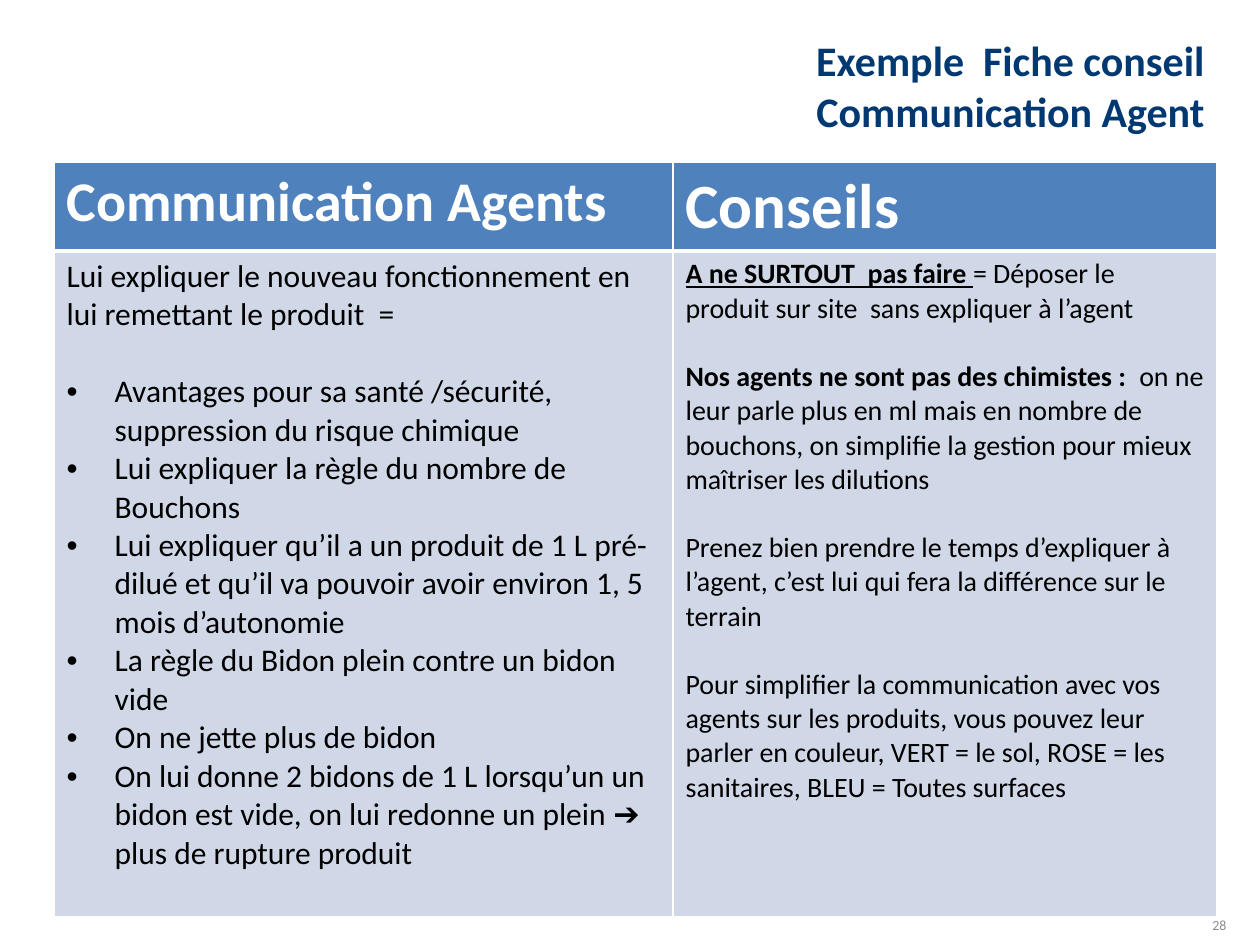
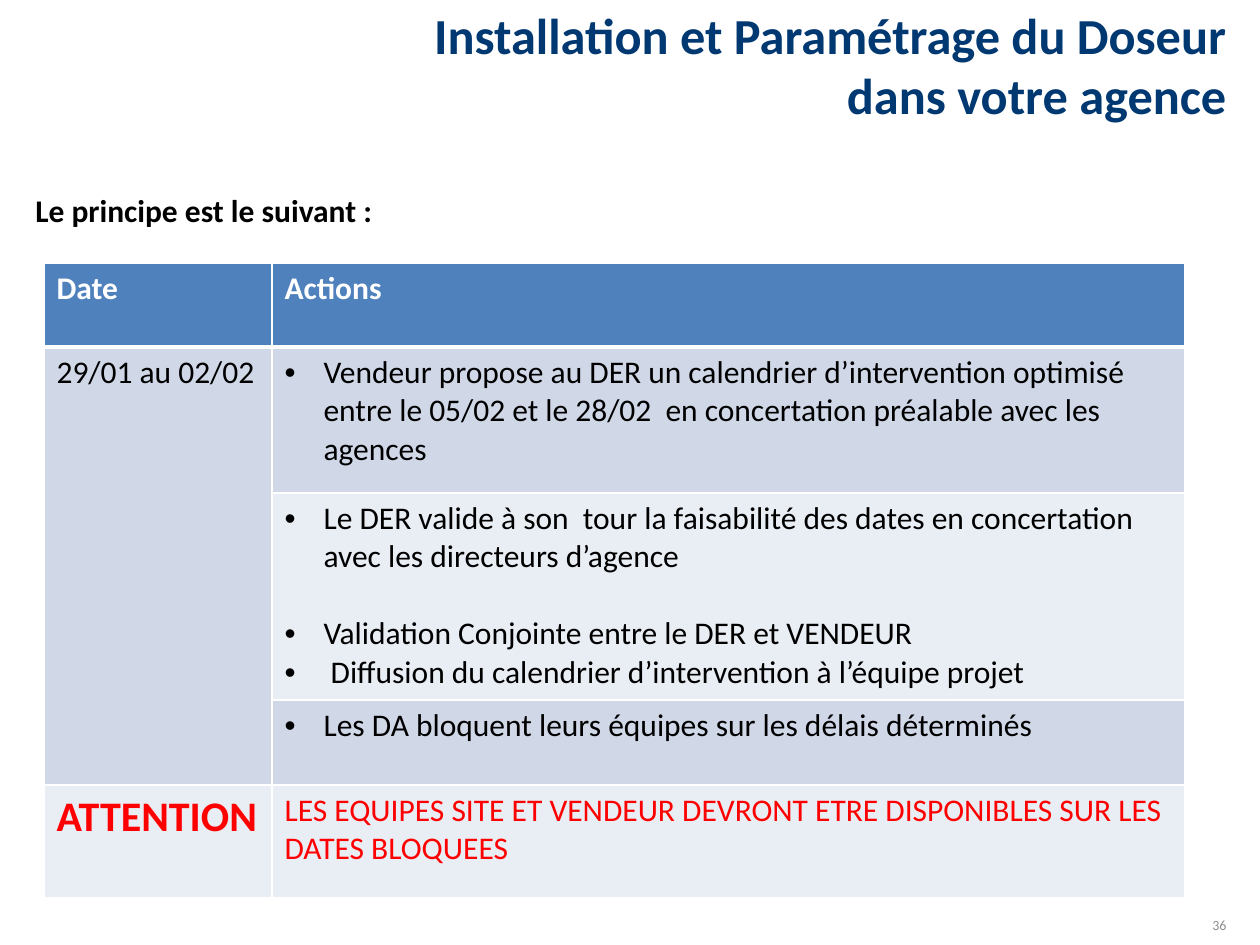
from dataclasses import dataclass, field

from lxml import etree
from pptx import Presentation
from pptx import util as u
from pptx.dml.color import RGBColor
from pptx.enum import text
from pptx.oxml import ns

FONT = "Calibri"
PX_PER_INCH = 126
COLORS = {
    "title": "003871",
    "header": "4F81BD",
    "band": "D0D8E8",
    "light": "E9EDF4",
    "white": "FFFFFF",
    "black": "000000",
    "alert": "FF0000",
    "number": "8C8C8C",
}

# Text formats
TITLE = {"size": 24, "bold": True, "color": "title"}
BIG_TITLE = TITLE | {"size": 28.8}
NUMBER = {"size": 8, "bold": False, "color": "number"}
BODY = {"size": 18, "bold": False, "color": "black"}
STRONG = BODY | {"bold": True}
ADVICE = BODY | {"size": 16}
ADVICE_STRONG = ADVICE | {"bold": True}
ADVICE_KEY = ADVICE_STRONG | {"underline": True}
HEADER = {"size": 18, "bold": True, "color": "white"}
ALERT = BODY | {"color": "alert"}
BIG_ALERT = ALERT | {"size": 24, "bold": True}

# Gaps of one text line, in points
BODY_GAP = 22
ADVICE_GAP = 19.5


@dataclass
class Span:
    words: str
    style: dict


@dataclass
class Para:
    spans: list[Span]
    hang: int = 0  # bullet indent in px, 0 for no bullet
    before: float = 0
    align: text.PP_ALIGN = text.PP_ALIGN.LEFT


@dataclass
class Cell:
    paras: list[Para]
    fill: str
    rows: int = 1  # rows covered by the cell


@dataclass
class Grid:
    left: int
    top: int
    columns: list[int]
    rows: list[int]
    cells: dict[tuple[int, int], Cell] = field(default_factory=dict)


def px(length: int) -> u.Emu:
    return u.Emu(round(length * 914400 / PX_PER_INCH))


def line(words: str, style: dict, **layout) -> Para:
    return Para([Span(words, style)], **layout)


def add_bullet(para, hang: int) -> None:
    props = para._p.get_or_add_pPr()
    props.set("marL", str(px(hang)))
    props.set("indent", str(-px(hang)))
    etree.SubElement(props, ns.qn("a:buFont")).set("typeface", "Arial")
    etree.SubElement(props, ns.qn("a:buChar")).set("char", "•")


def write_span(para, span: Span) -> None:
    for index, words in enumerate(span.words.split("\n")):
        if index:
            para.add_line_break()
        run = para.add_run()
        run.text = words
        values = {"name": FONT} | span.style
        values["size"] = u.Pt(values["size"])
        run.font.color.rgb = RGBColor.from_string(COLORS[values.pop("color")])
        for name, value in values.items():
            setattr(run.font, name, value)


def write(frame, paras: list[Para]) -> None:
    for index, item in enumerate(paras):
        para = frame.add_paragraph() if index else frame.paragraphs[0]
        if item.hang:
            add_bullet(para, item.hang)
        para.alignment = item.align
        if item.before:
            para.space_before = u.Pt(item.before)
        for span in item.spans:
            write_span(para, span)


def add_box(page, place: tuple[int, int, int, int], para: Para,
            anchor=text.MSO_ANCHOR.TOP) -> None:
    frame = page.shapes.add_textbox(*map(px, place)).text_frame
    frame.word_wrap = True
    frame.vertical_anchor = anchor
    write(frame, [para])


def add_border(cell, row: int) -> None:
    """White edges, thicker between the header and the body."""
    props = cell._tc.get_or_add_tcPr()
    for side in "LRTB":
        thick = (row, side) in {(0, "B"), (1, "T")}
        edge = etree.SubElement(props, ns.qn(f"a:ln{side}"))
        edge.set("w", str(u.Pt(3 if thick else 1)))
        fill = etree.SubElement(edge, ns.qn("a:solidFill"))
        etree.SubElement(fill, ns.qn("a:srgbClr")).set("val", COLORS["white"])


def add_grid(page, grid: Grid) -> None:
    table = page.shapes.add_table(
        len(grid.rows), len(grid.columns), px(grid.left), px(grid.top),
        px(sum(grid.columns)), px(sum(grid.rows))).table
    table.horz_banding = False
    for column, width in zip(table.columns, grid.columns):
        column.width = px(width)
    for row, height in zip(table.rows, grid.rows):
        row.height = px(height)
    for (row, column), item in grid.cells.items():
        first = table.cell(row, column)
        for covered in range(row, row + item.rows):
            cell = table.cell(covered, column)
            add_border(cell, covered)
            cell.fill.solid()
            cell.fill.fore_color.rgb = RGBColor.from_string(COLORS[item.fill])
        if item.rows > 1:
            first.merge(table.cell(row + item.rows - 1, column))
        write(first.text_frame, item.paras)


def add_page(deck, title: str, style: dict, place: tuple[int, int, int, int],
             number: int):
    """Blank page with its right-aligned title and page number."""
    page = deck.slides.add_slide(deck.slide_layouts[6])
    right = text.PP_ALIGN.RIGHT
    add_box(page, place, line(title, style, align=right), text.MSO_ANCHOR.MIDDLE)
    add_box(page, (1144, 910, 95, 25), line(str(number), NUMBER, align=right))
    return page


def build_advice(deck) -> None:
    page = add_page(deck, "Exemple  Fiche conseil\nCommunication Agent",
                    TITLE, (83, 37, 1134, 96), 28)
    points = [
        "Avantages pour sa santé /sécurité, suppression du risque chimique",
        "Lui expliquer la règle du nombre de Bouchons",
        "Lui expliquer qu’il a un produit de 1 L pré-dilué et qu’il va pouvoir "
        "avoir environ 1, 5 mois d’autonomie",
        "La règle du Bidon plein contre un bidon vide",
        "On ne jette plus de bidon",
        "On lui donne 2 bidons de 1 L lorsqu’un un bidon est vide, on lui "
        "redonne un plein ➔ plus de rupture produit",
    ]
    explain = [line("Lui expliquer le nouveau fonctionnement en lui remettant "
                    "le produit  =", BODY)]
    explain += [line(point, BODY, hang=48, before=0 if index else BODY_GAP)
                for index, point in enumerate(points)]
    advice = [
        Para([Span("A ne SURTOUT  pas faire ", ADVICE_KEY),
              Span("= Déposer le produit sur site  sans expliquer à l’agent",
                   ADVICE)]),
        Para([Span("Nos agents ne sont pas des chimistes :  ", ADVICE_STRONG),
              Span("on ne leur parle plus en ml mais en nombre de bouchons, on "
                   "simplifie la gestion pour mieux maîtriser les dilutions",
                   ADVICE)], before=ADVICE_GAP),
        line("Prenez bien prendre le temps d’expliquer à l’agent, c’est lui "
             "qui fera la différence sur le terrain", ADVICE, before=ADVICE_GAP),
        line("Pour simplifier la communication avec vos agents sur les "
             "produits, vous pouvez leur parler en couleur, VERT = le sol, "
             "ROSE = les sanitaires, BLEU = Toutes surfaces", ADVICE,
             before=ADVICE_GAP),
    ]
    add_grid(page, Grid(54, 162, [619, 544], [89, 666], {
        (0, 0): Cell([line("Communication Agents", HEADER | {"size": 32})], "header"),
        (0, 1): Cell([line("Conseils", HEADER | {"size": 36})], "header"),
        (1, 0): Cell(explain, "band"),
        (1, 1): Cell(advice, "band"),
    }))


def build_schedule(deck) -> None:
    page = add_page(deck, "Installation et Paramétrage du Doseur dans votre agence",
                    BIG_TITLE, (357, 0, 882, 129), 36)
    add_box(page, (23, 185, 1121, 471), line("Le principe est le suivant :", STRONG))

    def action(words: str, before: float = 0) -> Para:
        return line(words, BODY, hang=39, before=before)

    add_grid(page, Grid(44, 263, [228, 913], [84, 146, 207, 85, 113], {
        (0, 0): Cell([line("Date", HEADER)], "header"),
        (0, 1): Cell([line("Actions", HEADER)], "header"),
        (1, 0): Cell([line("29/01 au 02/02", BODY)], "band", rows=3),
        (1, 1): Cell([action(
            "Vendeur propose au DER un calendrier d’intervention optimisé  entre "
            "le 05/02 et le 28/02  en concertation préalable avec les agences")],
            "band"),
        (2, 1): Cell([
            action("Le DER valide à son  tour la faisabilité des dates en "
                   "concertation avec les directeurs d’agence"),
            action("Validation Conjointe entre le DER et VENDEUR", BODY_GAP),
            action(" Diffusion du calendrier d’intervention à l’équipe projet"),
        ], "light"),
        (3, 1): Cell([action(
            "Les DA bloquent leurs équipes sur les délais déterminés")], "band"),
        (4, 0): Cell([line("ATTENTION", BIG_ALERT)], "light"),
        (4, 1): Cell([line(
            "LES EQUIPES SITE ET VENDEUR DEVRONT ETRE DISPONIBLES SUR LES DATES "
            "BLOQUEES", ALERT)], "light"),
    }))


def main() -> None:
    deck = Presentation()
    deck.slide_width, deck.slide_height = px(1260), px(945)
    build_advice(deck)
    build_schedule(deck)
    deck.save("out.pptx")


if __name__ == "__main__":
    main()
